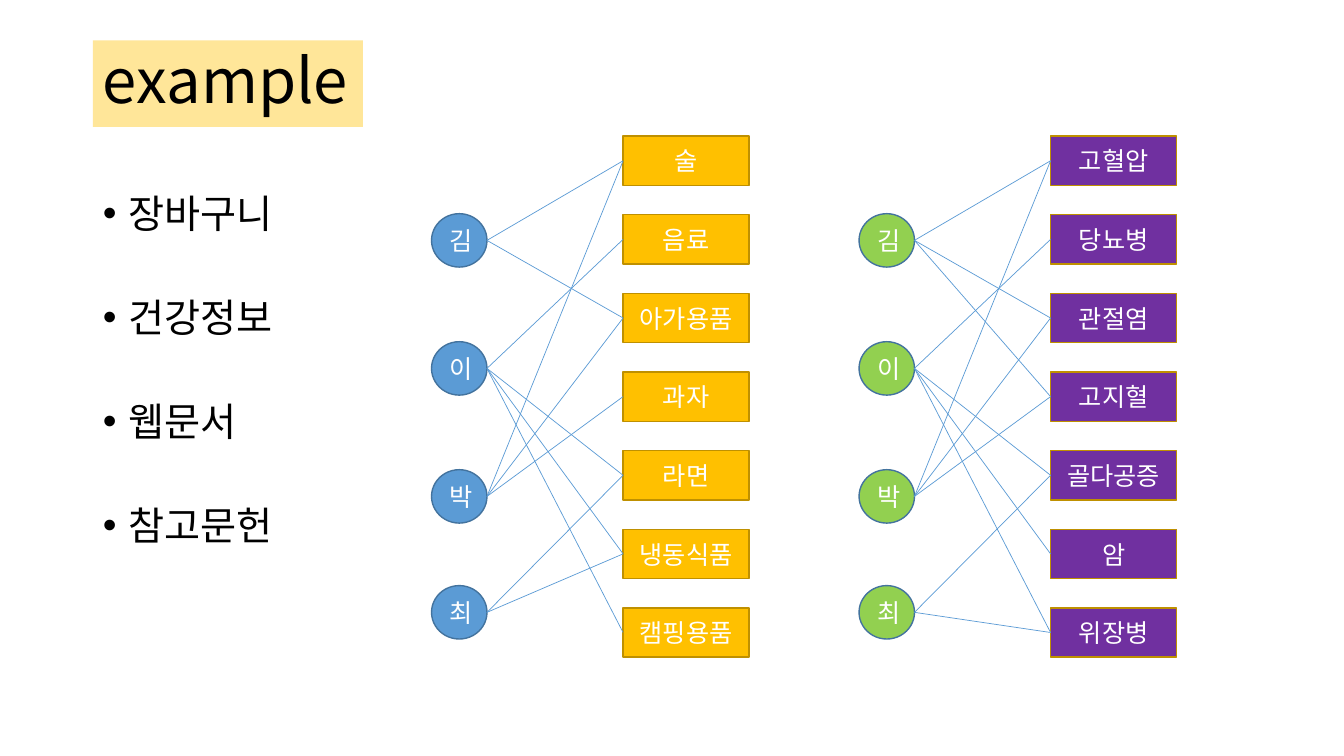
import pptx
import pptx.dml.color
import pptx.enum.shapes
import pptx.enum.text
import pptx.oxml.ns
import pptx.util
from lxml import etree

Inches = pptx.util.Inches
Pt = pptx.util.Pt
Kind = pptx.enum.shapes.MSO_SHAPE
Align = pptx.enum.text.PP_ALIGN
Anchor = pptx.enum.text.MSO_ANCHOR
qn = pptx.oxml.ns.qn
face = "Noto Sans CJK KR"


def paint(form, tint):
    if hasattr(form, "solid"):
        form.solid()
        form = form.fore_color
    form.rgb = pptx.dml.color.RGBColor.from_string(tint)


def write(para, text, size, tint, **looks):
    for name, value in looks.items():
        setattr(para, name, value)
    run = para.add_run()
    run.text = text
    for name, value in {"size": Pt(size), "name": face}.items():
        setattr(run.font, name, value)
    paint(run.font.color, tint)
    east = etree.SubElement(run.font._element, qn("a:ea"))
    east.set("typeface", face)


deck = pptx.Presentation()
deck.slide_width = Inches(13.33)
deck.slide_height = Inches(7.5)
slide = deck.slides.add_slide(deck.slide_layouts[1])
title, body = slide.placeholders

places = [(title, (0.92, 0.4, 2.68, 0.86)), (body, (0.92, 1.88, 11.5, 4.89))]
for holder, spot in places:
    for name, value in zip(("left", "top", "width", "height"), spot):
        setattr(holder, name, Inches(value))
    holder.text_frame.auto_size = pptx.enum.text.MSO_AUTO_SIZE.NONE

paint(title.fill, "FFE699")
title.text_frame.vertical_anchor = Anchor.MIDDLE
write(title.text_frame.paragraphs[0], "example", 44, "000000",
      alignment=Align.LEFT, line_spacing=0.9)

topics = ["장바구니", "건강정보", "웹문서", "참고문헌"]
for row, topic in enumerate(topics):
    frame = body.text_frame
    para = frame.add_paragraph() if row else frame.paragraphs[0]
    write(para, topic, 28, "000000", line_spacing=0.9,
          space_before=Pt(44 if row else 10))
    props = para._p.get_or_add_pPr()
    for name, value in {"marL": 0.25, "indent": -0.25}.items():
        props.set(name, str(Inches(value)))

people = dict(zip("김이박최", (2.12, 3.39, 4.66, 5.81)))
goods = ["술", "음료", "아가용품", "과자", "라면", "냉동식품", "캠핑용품"]
ills = ["고혈압", "당뇨병", "관절염", "고지혈", "골다공증", "암", "위장병"]
graphs = [
    (4.28, "5B9BD5", "FFC000", goods,
     {"김": (0, 2), "이": (1, 4, 5, 6), "박": (0, 2, 3), "최": (4, 5)}),
    (8.52, "92D050", "7030A0", ills,
     {"김": (0, 2, 3), "이": (1, 4, 5, 6), "박": (0, 2, 3), "최": (4, 6)}),
]
first, pitch = 1.35, 0.78
wide, tall = 0.55, 0.53
gap, breadth, height = 1.9, 1.25, 0.49

for left, disc, tile, items, links in graphs:
    nodes = [(Kind.OVAL, name, left, top, wide, tall, disc, "43739E")
             for name, top in people.items()]
    nodes += [(Kind.RECTANGLE, item, left + gap, first + row * pitch,
               breadth, height, tile, "BF9000")
              for row, item in enumerate(items)]
    for kind, text, x, y, w, h, fill, edge in nodes:
        node = slide.shapes.add_shape(kind, *map(Inches, (x, y, w, h)))
        node.shadow.inherit = False
        paint(node.fill, fill)
        paint(node.line.fill, edge)
        node.line.width = Pt(1)
        node.text_frame.vertical_anchor = Anchor.MIDDLE
        write(node.text_frame.paragraphs[0], text, 18, "FFFFFF",
              alignment=Align.CENTER)
    for name, rows in links.items():
        for row in rows:
            ends = (left + wide, people[name] + tall / 2,
                    left + gap, first + row * pitch + height / 2)
            link = slide.shapes.add_connector(
                pptx.enum.shapes.MSO_CONNECTOR.STRAIGHT, *map(Inches, ends))
            paint(link.line.fill, "5B9BD5")
            link.line.width = Pt(0.5)
            etree.SubElement(link._element.spPr, qn("a:effectLst"))

deck.save("out.pptx")
